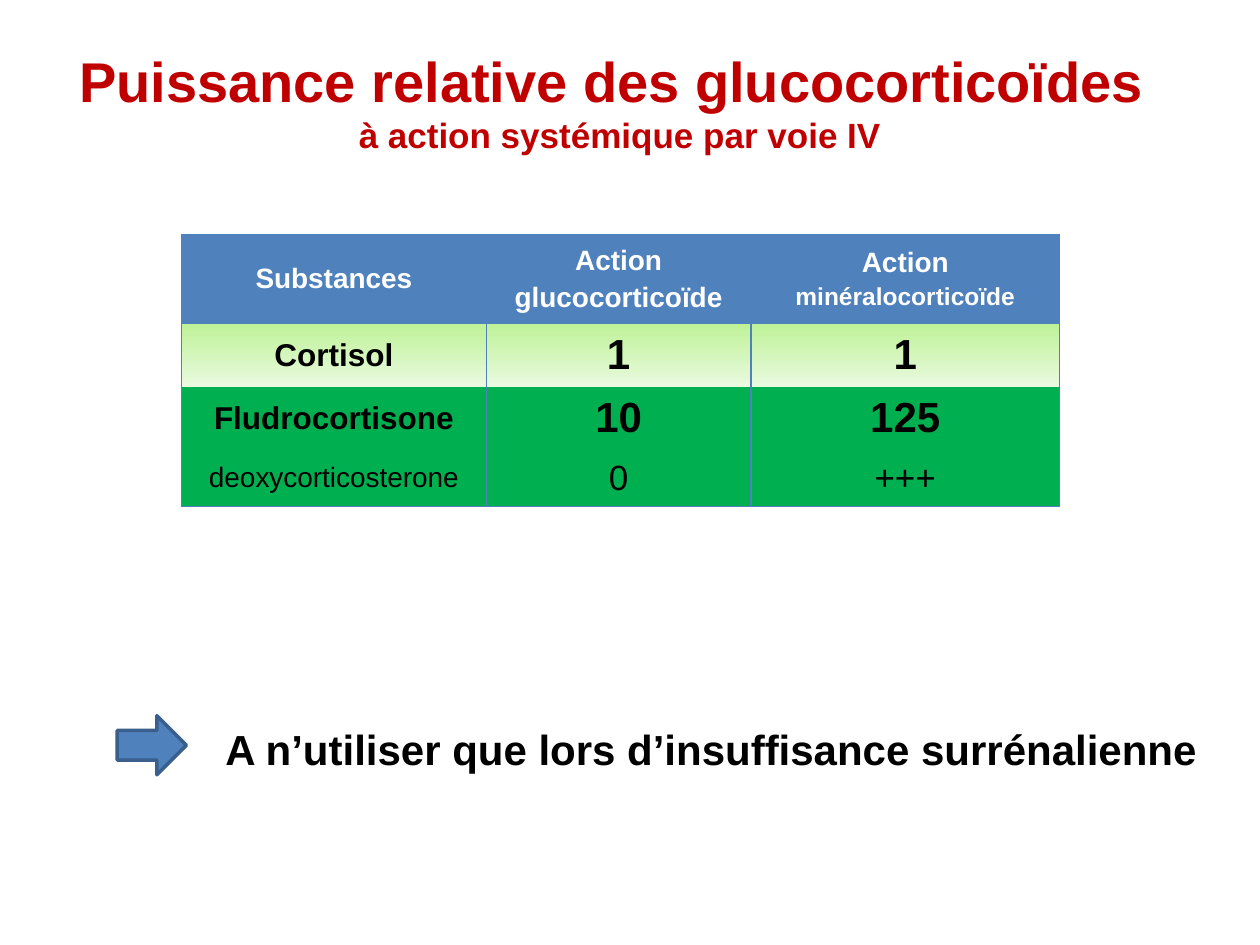
from lxml.etree import SubElement
from pptx import Presentation
from pptx.dml.color import RGBColor
from pptx.enum.shapes import MSO_SHAPE as Shape
from pptx.enum.text import MSO_ANCHOR as Anchor, PP_ALIGN as Align
from pptx.oxml import parse_xml
from pptx.oxml.ns import nsdecls, qn
from pptx.util import Inches, Pt

RED = RGBColor(0xC0, 0x00, 0x00)
BLUE = RGBColor(0x4F, 0x81, 0xBD)
DARK_BLUE = RGBColor(0x3A, 0x5F, 0x8C)
GREEN = RGBColor(0x00, 0xB0, 0x50)
LIME = RGBColor(0xBE, 0xF2, 0x97)
PALE_LIME = RGBColor(0xEA, 0xFA, 0xE0)
BLACK = RGBColor(0x00, 0x00, 0x00)
WHITE = RGBColor(0xFF, 0xFF, 0xFF)

PLAIN_STYLE = "{2D5ABB26-0587-4C30-8999-92F81FD0307C}"
COLUMNS = [2.42, 2.1, 2.45]
HEADER = [
    [("Substances", 16)],
    [("Action", 16), ("glucocorticoïde", 16)],
    [("Action", 16), ("minéralocorticoïde", 14)],
]
ROWS = [
    (0.71, HEADER, WHITE, True, [BLUE]),
    (0.45, [[("Cortisol", 18)], [("1", 24)], [("1", 24)]], BLACK, True, [LIME, PALE_LIME]),
    (0.45, [[("Fludrocortisone", 18)], [("10", 24)], [("125", 24)]], BLACK, True, [GREEN]),
    (0.45, [[("deoxycorticosterone", 16)], [("0", 20)], [("+++", 20)]], BLACK, False, [GREEN]),
]


def add_text(para, text, size, color=BLACK, bold=True, align=None):
    if align is not None:
        para.alignment = align
    span = para.add_run()
    span.text = text
    span.font.name = "Arial"
    span.font.size = Pt(size)
    span.font.bold = bold
    span.font.color.rgb = color


def add_title(page, left, top, width, height):
    box = page.shapes.add_textbox(left, top, width, height)
    frame = box.text_frame
    frame.word_wrap = True
    frame.vertical_anchor = Anchor.MIDDLE
    para = frame.paragraphs[0]
    add_text(para, "Puissance relative des glucocorticoïdes ", 32, RED, align=Align.CENTER)
    para.add_line_break()
    add_text(para, "à action systémique par voie IV", 20, RED)


def set_borders(cell, sides):
    properties = cell._tc.get_or_add_tcPr()
    for position, side in enumerate(sides):
        line = parse_xml(f'<a:ln{side} {nsdecls("a")} w="{Pt(1)}"/>')
        fill = SubElement(line, qn("a:solidFill"))
        SubElement(fill, qn("a:srgbClr"), val=str(BLUE))
        properties.insert(position, line)


def fill_cell(cell, colors):
    if len(colors) == 1:
        cell.fill.solid()
        cell.fill.fore_color.rgb = colors[0]
        return
    cell.fill.gradient()
    cell.fill.gradient_angle = 270
    for stop, color in zip(cell.fill.gradient_stops, colors):
        stop.color.rgb = color


def add_potency_table(page, left, top, width, height):
    frame = page.shapes.add_table(len(ROWS), len(COLUMNS), left, top, width, height)
    table = frame.table
    table._tbl.tblPr.find(qn("a:tableStyleId")).text = PLAIN_STYLE
    table.first_row = table.horz_banding = False
    for column, column_width in zip(table.columns, COLUMNS):
        column.width = Inches(column_width)
    for row_index, (row_height, entries, color, bold, fills) in enumerate(ROWS):
        table.rows[row_index].height = Inches(row_height)
        for column_index, lines in enumerate(entries):
            cell = table.cell(row_index, column_index)
            cell.vertical_anchor = Anchor.MIDDLE
            fill_cell(cell, fills)
            sides = ["L", "R"]
            if row_index == 0:
                sides.append("T")
            if row_index == len(ROWS) - 1:
                sides.append("B")
            set_borders(cell, sides)
            for line_index, (text, size) in enumerate(lines):
                para = cell.text_frame.paragraphs[0]
                if line_index:
                    para = cell.text_frame.add_paragraph()
                    para.space_before = Pt(size * 0.2)
                add_text(para, text, size, color, bold, Align.CENTER)


def add_conclusion(page, left, top, width, height):
    arrow = page.shapes.add_shape(Shape.RIGHT_ARROW, left, top, Inches(0.55), Inches(0.47))
    arrow.shadow.inherit = False
    arrow.fill.solid()
    arrow.fill.fore_color.rgb = BLUE
    arrow.line.color.rgb = DARK_BLUE
    arrow.line.width = Pt(2)
    indent = Inches(0.76)
    box = page.shapes.add_textbox(left + indent, top + Inches(0.01), width - indent, height)
    box.text_frame.word_wrap = False
    add_text(box.text_frame.paragraphs[0], "A n’utiliser que lors d’insuffisance surrénalienne", 24)


def main():
    deck = Presentation()
    deck.slide_width = Inches(10)
    deck.slide_height = Inches(7.5)
    page = deck.slides.add_slide(deck.slide_layouts[6])
    add_title(page, Inches(0.43), Inches(0.21), Inches(8.98), Inches(1.18))
    add_potency_table(page, Inches(1.44), Inches(1.86), Inches(6.97), Inches(2.06))
    add_conclusion(page, Inches(0.93), Inches(5.68), Inches(8.83), Inches(0.5))
    deck.save("out.pptx")


if __name__ == "__main__":
    main()
